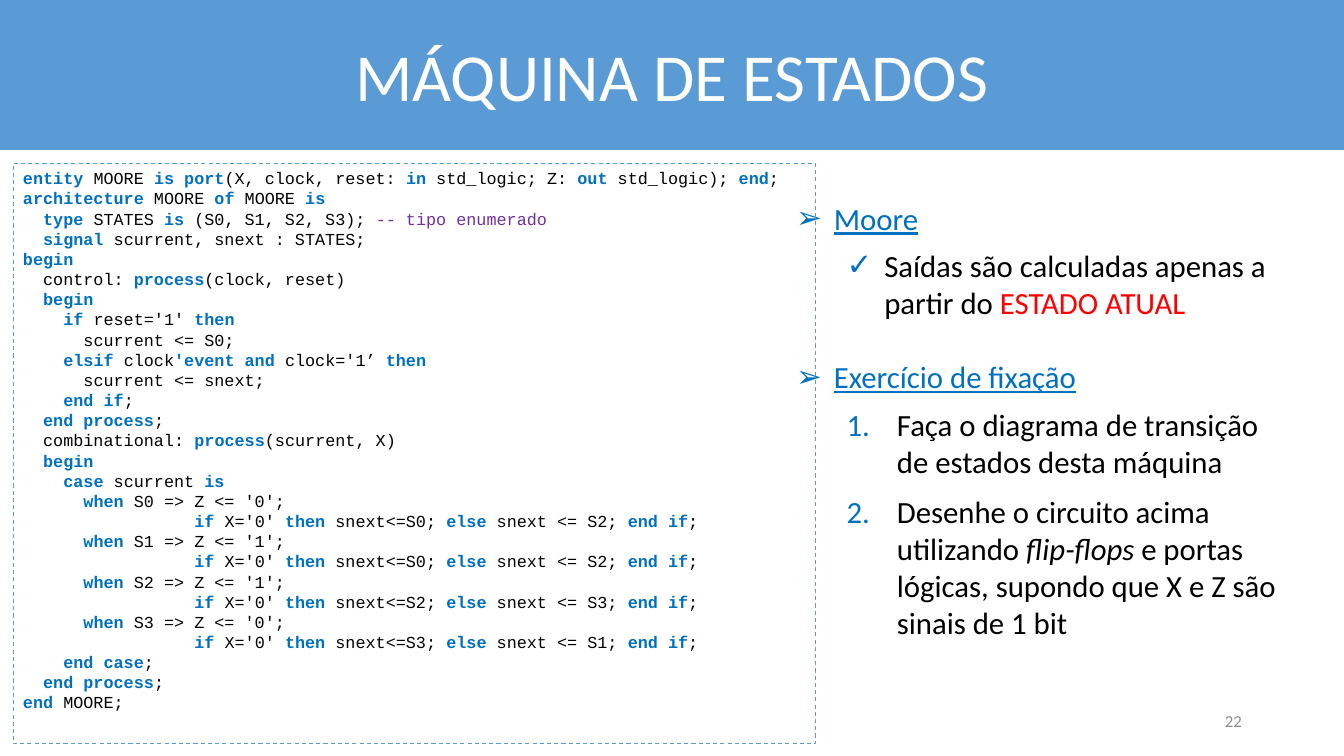
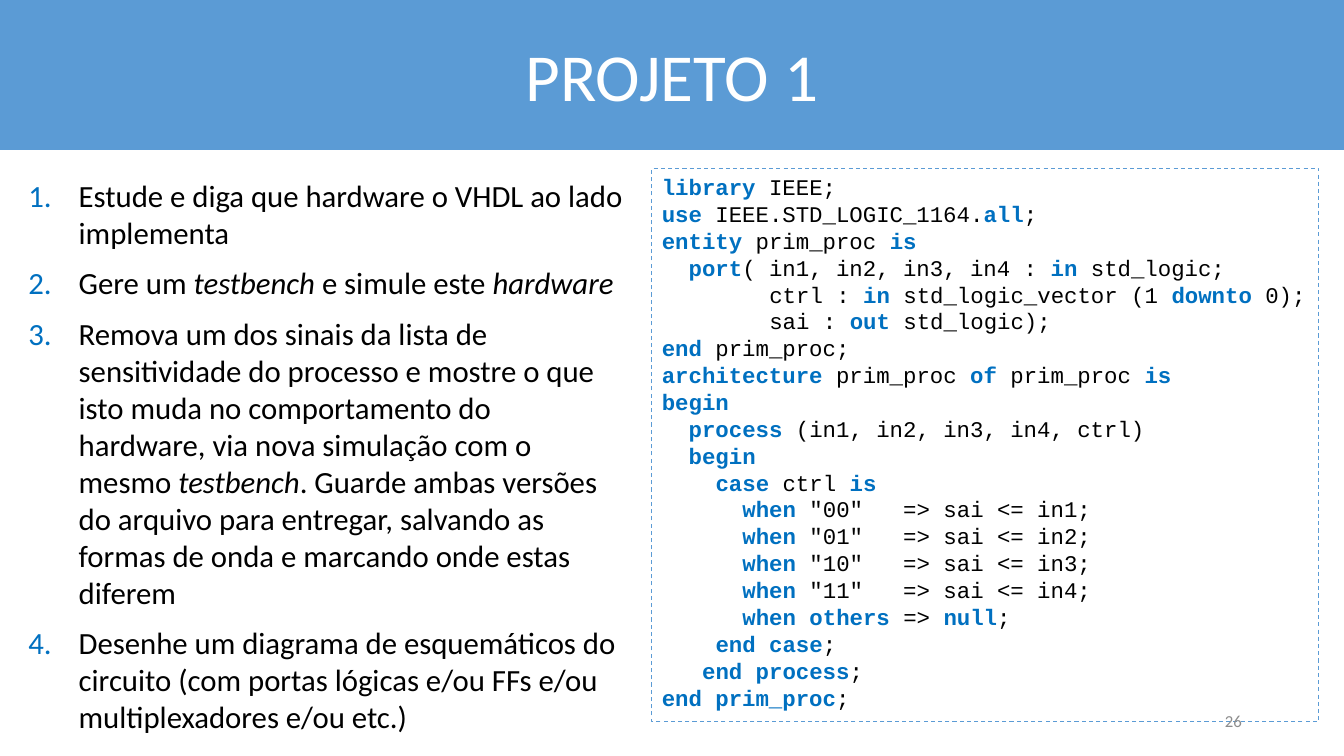
from itertools import groupby

from lxml.etree import SubElement
from pptx import Presentation
from pptx.dml.color import RGBColor
from pptx.enum.dml import MSO_LINE
from pptx.enum.shapes import MSO_SHAPE
from pptx.enum.text import MSO_ANCHOR, MSO_AUTO_SIZE, PP_ALIGN
from pptx.oxml.ns import qn
from pptx.util import Cm, Pt

WIDTH, HEIGHT, BAND_HEIGHT = 33.87, 19.05, 3.78
BAND, ACCENT = "5B9BD5", "0070C0"

TITLE_FONT = {"name": "Calibri", "size": Pt(48), "color": "FFFFFF"}
BODY_FONT = {"name": "Calibri", "size": Pt(22), "color": "000000"}
NUMBER_FONT = {"name": "Calibri", "size": Pt(12), "color": "8C8C8C"}
CODE_FONT = {"name": "Courier New", "color": "000000"}

# A mark switches its format on, and off again the next time it appears.
MARKS = {
    "*": {"bold": True, "color": ACCENT},
    "~": {"color": "7030A0"},
    "^": {"italic": True},
    "!": {"color": "FF0000"},
    "@": {"underline": True, "color": ACCENT},
}

# Kind of item: level, left margin and hanging indent in cm, bullet
ITEM_KINDS = {
    "topic": (0, 0.95, 0.95, "➢"),
    "check": (1, 2.22, 0.95, "✓"),
    "step": (1, 2.54, 1.27, None),
    "task": (0, 1.27, 1.27, None),
}

MOORE_STATES = [("S0", 0, "S0", "S2"), ("S1", 1, "S0", "S2"),
                ("S2", 1, "S2", "S3"), ("S3", 0, "S3", "S1")]
MOORE_CODE = [
    "*entity* MOORE *is port*(X, clock, reset: *in* std_logic; "
    "Z: *out* std_logic); *end*;",
    "*architecture* MOORE *of* MOORE *is*",
    "  *type* STATES *is* (S0, S1, S2, S3); ~-- tipo enumerado~",
    "  *signal* scurrent, snext : STATES;",
    "*begin*",
    "  control: *process*(clock, reset)",
    "  *begin*",
    "    *if* reset='1' *then*",
    "      scurrent <= S0;",
    "    *elsif* clock*'event and* clock='1’ *then*",
    "      scurrent <= snext;",
    "    *end if*;",
    "  *end process*;",
    "  combinational: *process*(scurrent, X)",
    "  *begin*",
    "    *case* scurrent *is*",
    *(line for state, z, on_zero, on_one in MOORE_STATES for line in (
        f"      *when* {state} => Z <= '{z}';",
        f"                 *if* X='0' *then* snext<={on_zero}; "
        f"*else* snext <= {on_one}; *end if*;")),
    "    *end case*;",
    "  *end process*;",
    "*end* MOORE;",
]
MOORE_ITEMS = [
    ("topic", 0, "@Moore@"),
    ("check", 7.3, "Saídas são calculadas apenas a partir do !ESTADO ATUAL!"),
    ("topic", 26.8, "@Exercício de fixação@"),
    ("step", 7.3, "Faça o diagrama de transição de estados desta máquina"),
    ("step", 9.8, "Desenhe o circuito acima utilizando ^flip-flops^ e portas "
                  "lógicas, supondo que X e Z são sinais de 1 bit"),
]

PROJECT_CODE = [
    "*library* IEEE;",
    "*use* IEEE.STD_LOGIC_1164.*all*;",
    "*entity* prim_proc *is*",
    "  *port*( in1, in2, in3, in4 : *in* std_logic;",
    "        ctrl : *in* std_logic_vector (1 *downto* 0);",
    "        sai : *out* std_logic);",
    "*end* prim_proc;",
    "*architecture* prim_proc *of* prim_proc *is*",
    "*begin*",
    "  *process* (in1, in2, in3, in4, ctrl)",
    "  *begin*",
    "    *case* ctrl *is*",
    *(f'      *when* "{i:02b}"   => sai <= in{i + 1};' for i in range(4)),
    "      *when others* => *null*;",
    "    *end case*;",
    "   *end process*;",
    "*end prim_proc*;",
]
PROJECT_ITEMS = [
    ("task", 0, "Estude e diga que hardware o VHDL ao lado implementa"),
    ("task", 9.8, "Gere um ^testbench^ e simule este ^hardware^"),
    ("task", 9.8, "Remova um dos sinais da lista de sensitividade do processo e "
                  "mostre o que isto muda no comportamento do hardware, via nova "
                  "simulação com o mesmo ^testbench^. Guarde ambas versões do "
                  "arquivo para entregar, salvando as formas de onda e marcando "
                  "onde estas diferem"),
    ("task", 9.8, "Desenhe um diagrama de esquemáticos do circuito (com portas "
                  "lógicas e/ou FFs e/ou multiplexadores e/ou etc.)"),
]


def rgb(color):
    return RGBColor.from_string(color)


def set_font(font, fmt):
    for name, value in fmt.items():
        if name == "color":
            font.color.rgb = rgb(value)
        else:
            setattr(font, name, value)


def add_runs(p, text, fmt):
    """Add the text to the paragraph, one run for each stretch between marks."""
    active, styled = None, []
    for ch in text:
        if ch in MARKS:
            active = None if active == ch else ch
        else:
            styled.append((active, ch))
    for mark, group in groupby(styled, key=lambda pair: pair[0]):
        r = p.add_run()
        r.text = "".join(ch for _, ch in group)
        set_font(r.font, fmt | MARKS.get(mark, {}))


def paragraphs(tf, count):
    return [tf.paragraphs[0]] + [tf.add_paragraph() for _ in range(count - 1)]


def place(sp, box):
    for name, value in zip(("left", "top", "width", "height"), box):
        setattr(sp, name, Cm(value))


def set_margin(p, margin, indent):
    pPr = p._p.get_or_add_pPr()
    pPr.set("marL", str(int(margin)))
    pPr.set("indent", str(int(indent)))
    return pPr


def set_bullet(p, margin, hanging, char):
    """Give the paragraph a bullet character, or a number if there is none."""
    pPr = set_margin(p, Cm(margin), -Cm(hanging))
    SubElement(SubElement(pPr, qn("a:buClr")), qn("a:srgbClr"), val=ACCENT)
    if char:
        SubElement(pPr, qn("a:buChar"), char=char)
    else:
        SubElement(pPr, qn("a:buFont"), typeface="+mj-lt")
        SubElement(pPr, qn("a:buAutoNum"), type="arabicPeriod")


def fill_title(sp, text):
    place(sp, (0, 0, WIDTH, BAND_HEIGHT))
    sp.fill.solid()
    sp.fill.fore_color.rgb = rgb(BAND)
    tf = sp.text_frame
    tf.auto_size = MSO_AUTO_SIZE.NONE
    tf.vertical_anchor = MSO_ANCHOR.MIDDLE
    p = tf.paragraphs[0]
    p.alignment = PP_ALIGN.CENTER
    add_runs(p, text, TITLE_FONT)


def fill_list(sp, box, items):
    """Write items of (kind, space before in points, text)."""
    place(sp, box)
    tf = sp.text_frame
    tf.auto_size = MSO_AUTO_SIZE.NONE
    for p, (kind, gap, text) in zip(paragraphs(tf, len(items)), items):
        level, *bullet = ITEM_KINDS[kind]
        p.level = level
        p.space_before = Pt(gap)
        set_bullet(p, *bullet)
        add_runs(p, text, BODY_FONT)


def add_code(s, box, lines, size):
    """Add a dashed box of code; leading spaces become paragraph margins."""
    sp = s.shapes.add_shape(MSO_SHAPE.RECTANGLE, *map(Cm, box))
    sp.shadow.inherit = False
    sp.fill.background()
    sp.line.color.rgb = rgb(BAND)
    sp.line.width = Pt(0.75)
    sp.line.dash_style = MSO_LINE.DASH
    tf = sp.text_frame
    tf.word_wrap = True
    tf.vertical_anchor = MSO_ANCHOR.TOP
    for p, line in zip(paragraphs(tf, len(lines)), lines):
        code = line.lstrip()
        p.alignment = PP_ALIGN.LEFT
        p.line_spacing = Pt(1.2 * size)
        set_margin(p, Pt(0.6 * size) * (len(line) - len(code)), 0)
        add_runs(p, code, CODE_FONT | {"size": Pt(size)})


def add_slide_number(s, number):
    sp = s.shapes.add_textbox(Cm(23.93), Cm(17.65), Cm(7.62), Cm(1.02))
    tf = sp.text_frame
    tf.word_wrap = True
    tf.vertical_anchor = MSO_ANCHOR.MIDDLE
    p = tf.paragraphs[0]
    p.alignment = PP_ALIGN.RIGHT
    add_runs(p, str(number), NUMBER_FONT)


def add_code_slide(prs, number, title, list_box, items, code_box, code, code_size):
    s = prs.slides.add_slide(prs.slide_layouts.get_by_name("Title and Content"))
    fill_title(s.shapes.title, title)
    fill_list(s.placeholders[1], list_box, items)
    add_code(s, code_box, code, code_size)
    add_slide_number(s, number)


def main():
    prs = Presentation()
    prs.slide_width, prs.slide_height = Cm(WIDTH), Cm(HEIGHT)
    add_code_slide(prs, 22, "MÁQUINA DE ESTADOS",
                   (19.81, 4.9, 13, 11.45), MOORE_ITEMS,
                   (0.33, 4.11, 20.22, 14.63), MOORE_CODE, 12)
    add_code_slide(prs, 26, "PROJETO 1",
                   (0.46, 4.32, 15.52, 14.45), PROJECT_ITEMS,
                   (16.43, 4.24, 16.81, 13.94), PROJECT_CODE, 16)
    prs.save("out.pptx")


if __name__ == "__main__":
    main()
